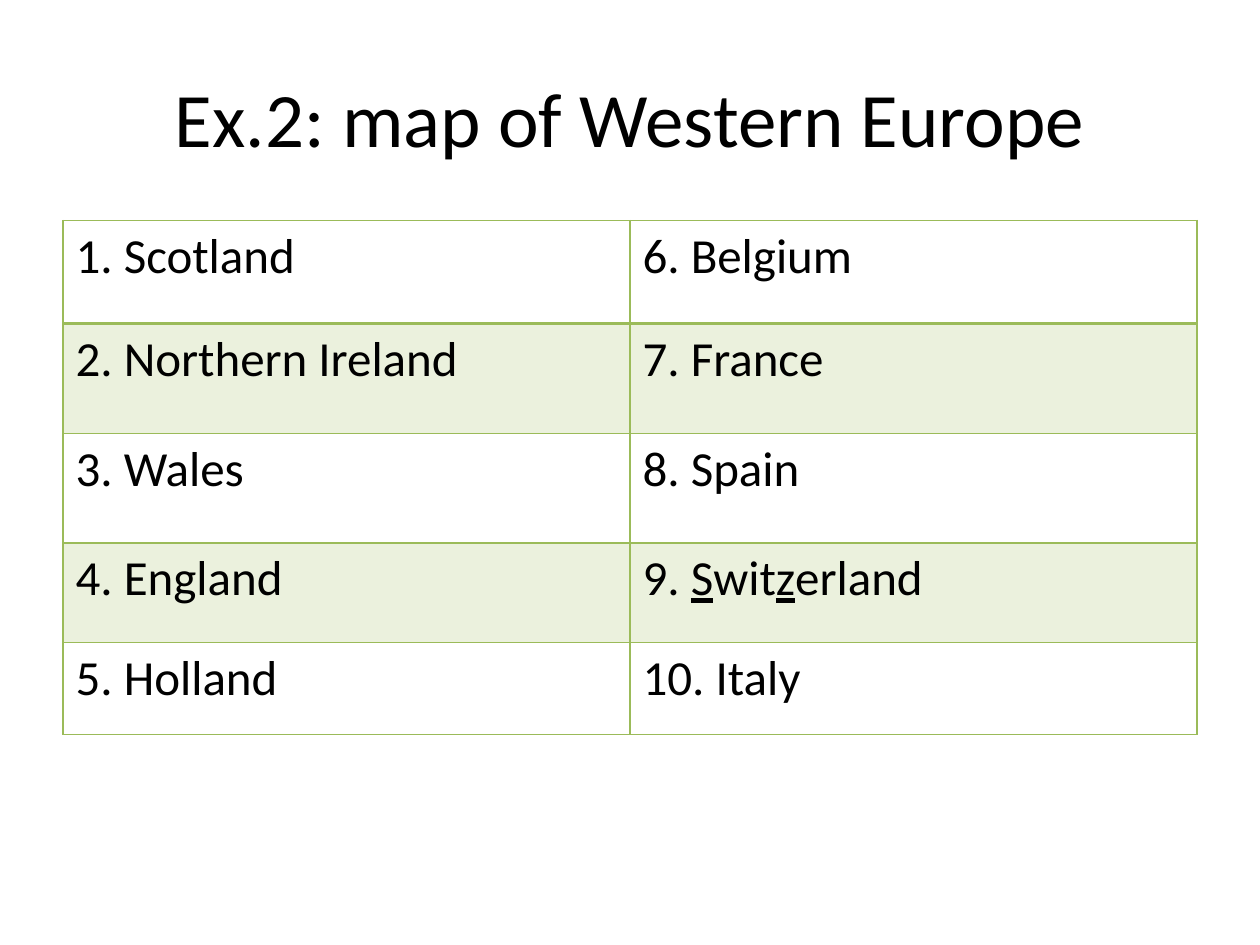
from lxml.etree import SubElement
from pptx import Presentation
from pptx.dml.color import RGBColor as Rgb
from pptx.enum.text import MSO_ANCHOR as Anchor, PP_ALIGN as Align
from pptx.oxml.ns import qn
from pptx.util import Inches, Pt

COLORS = {"text": "000000", "green": "9BBB59"}
FONT = "Calibri"
MARGIN = 0.05
BAND_OPACITY = 20
ROW_HEIGHTS = [0.82, 0.87, 0.87, 0.79, 0.73]
COUNTRIES = [
    ["Scotland", "Northern Ireland", "Wales", "England", "Holland"],
    ["Belgium", "France", "Spain", "Switzerland", "Italy"],
]
UNDERLINED = {"Switzerland": ["S", "wit", "z", "erland"]}


def style_span(span, size):
    """Give a run the slide's font and text colour."""
    span.font.name = FONT
    span.font.size = Pt(size)
    span.font.color.rgb = Rgb.from_string(COLORS["text"])


def add_title(page, text, width, height):
    """Place and format the title placeholder."""
    box = page.shapes.title
    box.left, box.top = int(width * MARGIN), int(height * 0.04)
    box.width, box.height = int(width * (1 - 2 * MARGIN)), Inches(1.25)
    frame = box.text_frame
    frame.text = text
    frame.vertical_anchor = Anchor.MIDDLE
    para = frame.paragraphs[0]
    para.alignment = Align.CENTER
    style_span(para.runs[0], 44)


def set_borders(cell, top, bottom):
    """Draw green lines on the four sides of a cell."""
    properties = cell._tc.get_or_add_tcPr()
    for side, points in (("L", 1), ("R", 1), ("T", top), ("B", bottom)):
        line = SubElement(properties, qn(f"a:ln{side}"), w=str(Pt(points)))
        fill = SubElement(line, qn("a:solidFill"))
        SubElement(fill, qn("a:srgbClr"), val=COLORS["green"])


def set_band(cell, shaded):
    """Fill a cell with translucent green or leave it clear."""
    if not shaded:
        cell.fill.background()
        return
    cell.fill.solid()
    cell.fill.fore_color.rgb = Rgb.from_string(COLORS["green"])
    color = cell._tc.tcPr.find(qn("a:solidFill")).find(qn("a:srgbClr"))
    SubElement(color, qn("a:alpha"), val=str(BAND_OPACITY * 1000))


def write_country(cell, number, country):
    """Write a numbered country, underlining its marked letters."""
    para = cell.text_frame.paragraphs[0]
    if country in UNDERLINED:
        parts = [f"{number}. ", *UNDERLINED[country]]
    else:
        parts = [f"{number}. {country}"]
    for index, part in enumerate(parts):
        span = para.add_run()
        span.text = part
        style_span(span, 28)
        if index % 2:
            span.font.underline = True


def add_country_table(page, width):
    """Add the table of countries, numbered down each column."""
    rows, columns = len(ROW_HEIGHTS), len(COUNTRIES)
    table = page.shapes.add_table(
        rows, columns, int(width * MARGIN), Inches(1.75),
        int(width * (1 - 2 * MARGIN)), Inches(sum(ROW_HEIGHTS)),
    ).table
    table.first_row = table.horz_banding = False
    for row, height in enumerate(ROW_HEIGHTS):
        table.rows[row].height = Inches(height)
        for column, names in enumerate(COUNTRIES):
            cell = table.cell(row, column)
            write_country(cell, column * rows + row + 1, names[row])
            set_borders(cell, 2 if row == 1 else 1, 2 if row == 0 else 1)
            set_band(cell, row % 2 == 1)


def main():
    """Build and save the slide."""
    deck = Presentation()
    deck.slide_width, deck.slide_height = Inches(10), Inches(7.5)
    page = deck.slides.add_slide(deck.slide_layouts[5])
    add_title(page, "Ex.2: map of Western Europe", deck.slide_width, deck.slide_height)
    add_country_table(page, deck.slide_width)
    deck.save("out.pptx")


if __name__ == "__main__":
    main()
